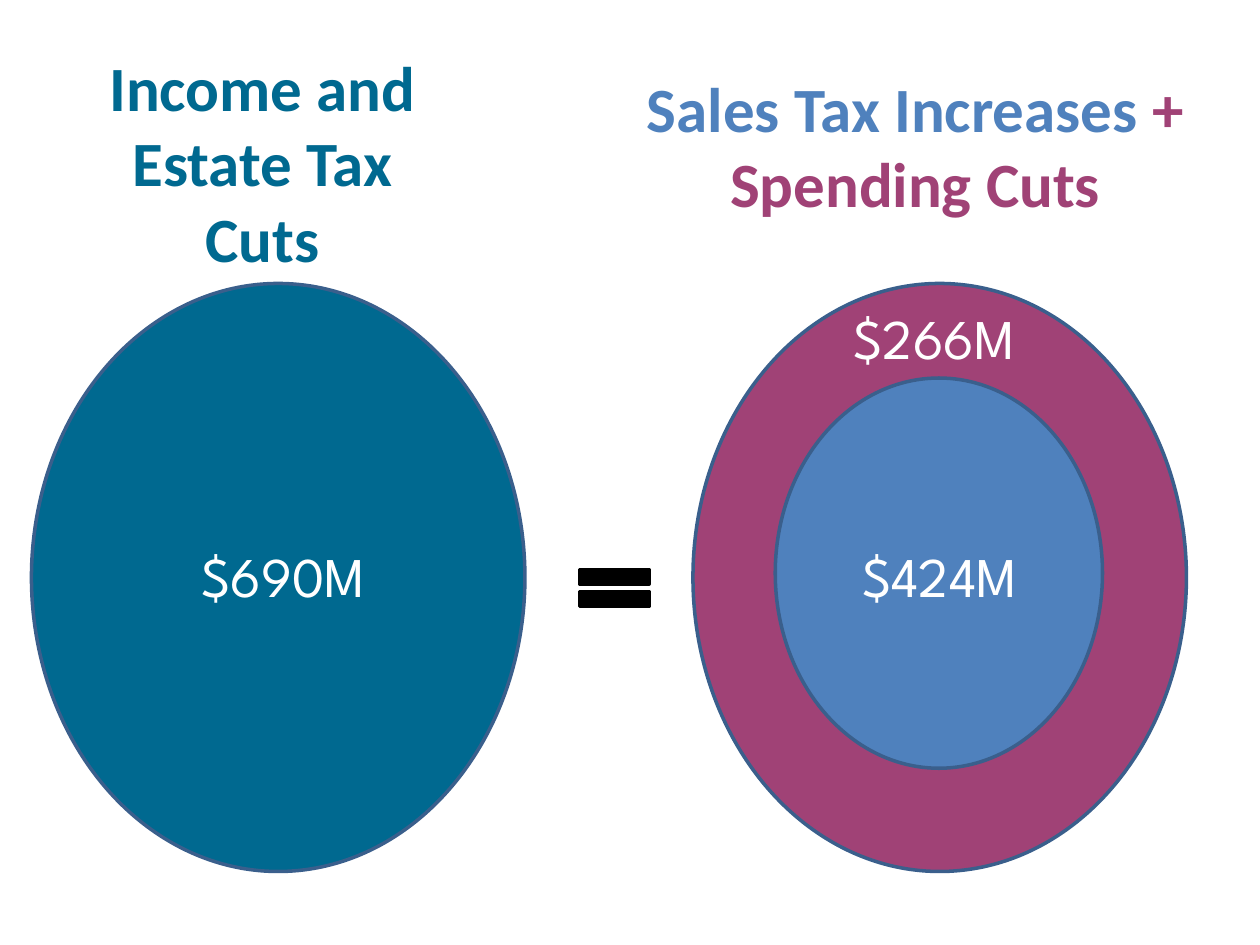
from dataclasses import dataclass
from pptx import Presentation
from pptx.dml.color import RGBColor as RGB
from pptx.enum.shapes import MSO_SHAPE as Kind
from pptx.enum.text import MSO_AUTO_SIZE as Fit, PP_ALIGN as Align
from pptx.util import Pt


@dataclass(frozen=True)
class Theme:
    teal: str = "006990"
    plum: str = "A04276"
    blue: str = "4F81BD"
    edge: str = "3A5F8C"
    black: str = "000000"
    white: str = "FFFFFF"
    head_font: str = "Calibri"
    sum_font: str = "League Spartan"
    head_size: int = 36
    sum_size: int = 32
    line: int = 2


THEME = Theme()


def add_form(slide, kind, box, fill, edge=THEME.edge):
    form = slide.shapes.add_shape(kind, *map(Pt, box))
    form.shadow.inherit = False
    form.fill.solid()
    form.fill.fore_color.rgb = RGB.from_string(fill)
    form.line.color.rgb = RGB.from_string(edge)
    form.line.width = Pt(THEME.line)


def add_text(slide, box, parts, font, size, bold=False):
    """Add one centred paragraph; parts are (words, colour) pairs."""
    frame = slide.shapes.add_textbox(*map(Pt, box)).text_frame
    frame.word_wrap = True
    frame.auto_size = Fit.SHAPE_TO_FIT_TEXT
    para = frame.paragraphs[0]
    para.alignment = Align.CENTER
    for words, color in parts:
        run = para.add_run()
        run.text = words
        run.font.name = font
        run.font.size = Pt(size)
        run.font.bold = bold
        run.font.color.rgb = RGB.from_string(color)


def add_head(slide, box, *parts):
    add_text(slide, box, parts, THEME.head_font, THEME.head_size, True)


def add_sum(slide, left, top, width, words):
    add_text(slide, (left, top, width, 46), [(words, THEME.white)],
             THEME.sum_font, THEME.sum_size)


def main():
    deck = Presentation()
    deck.slide_width, deck.slide_height = Pt(720), Pt(540)
    slide = deck.slides.add_slide(deck.slide_layouts[6])
    top, wide, high = 162, 282, 336
    sum_top = 306

    add_form(slide, Kind.OVAL, (18, top, wide, high), THEME.teal)
    add_sum(slide, 60, sum_top, 204, "$690M")
    add_head(slide, (48, 24, 204, 138),
             ("Income and Estate Tax Cuts", THEME.teal))

    add_form(slide, Kind.OVAL, (396, top, wide, high), THEME.plum)
    add_head(slide, (325.5, 36, 395, 94),
             ("Sales Tax Increases ", THEME.blue),
             ("+ Spending Cuts", THEME.plum))
    add_form(slide, Kind.OVAL, (443, 216, 187, 223), THEME.blue)
    add_sum(slide, 426, sum_top, 222, "$424M")
    add_sum(slide, 390, 170, 288, "$266M")

    add_form(slide, Kind.MATH_EQUAL, (324, 318, 54, 36),
             THEME.black, THEME.black)
    deck.save("out.pptx")


if __name__ == "__main__":
    main()
